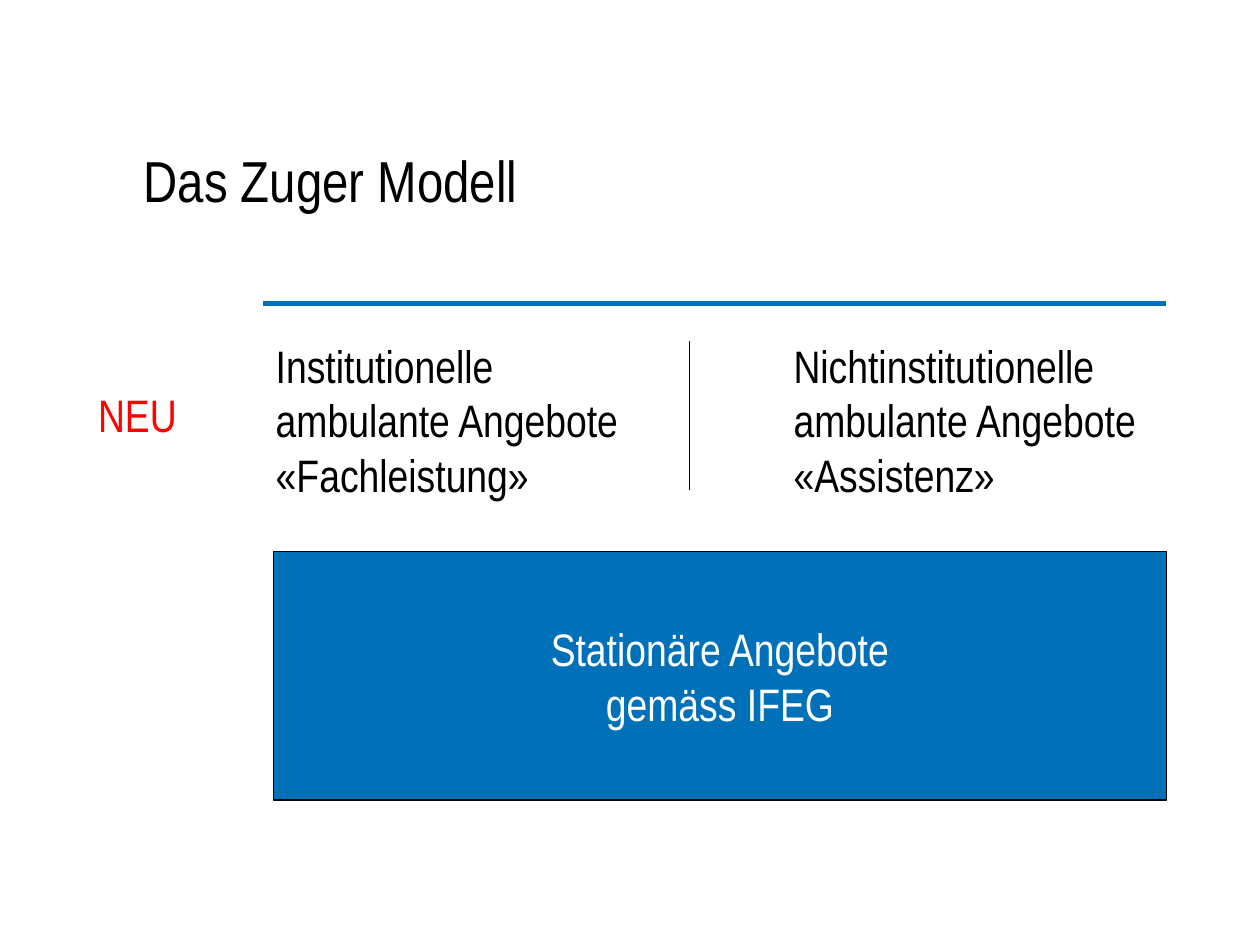
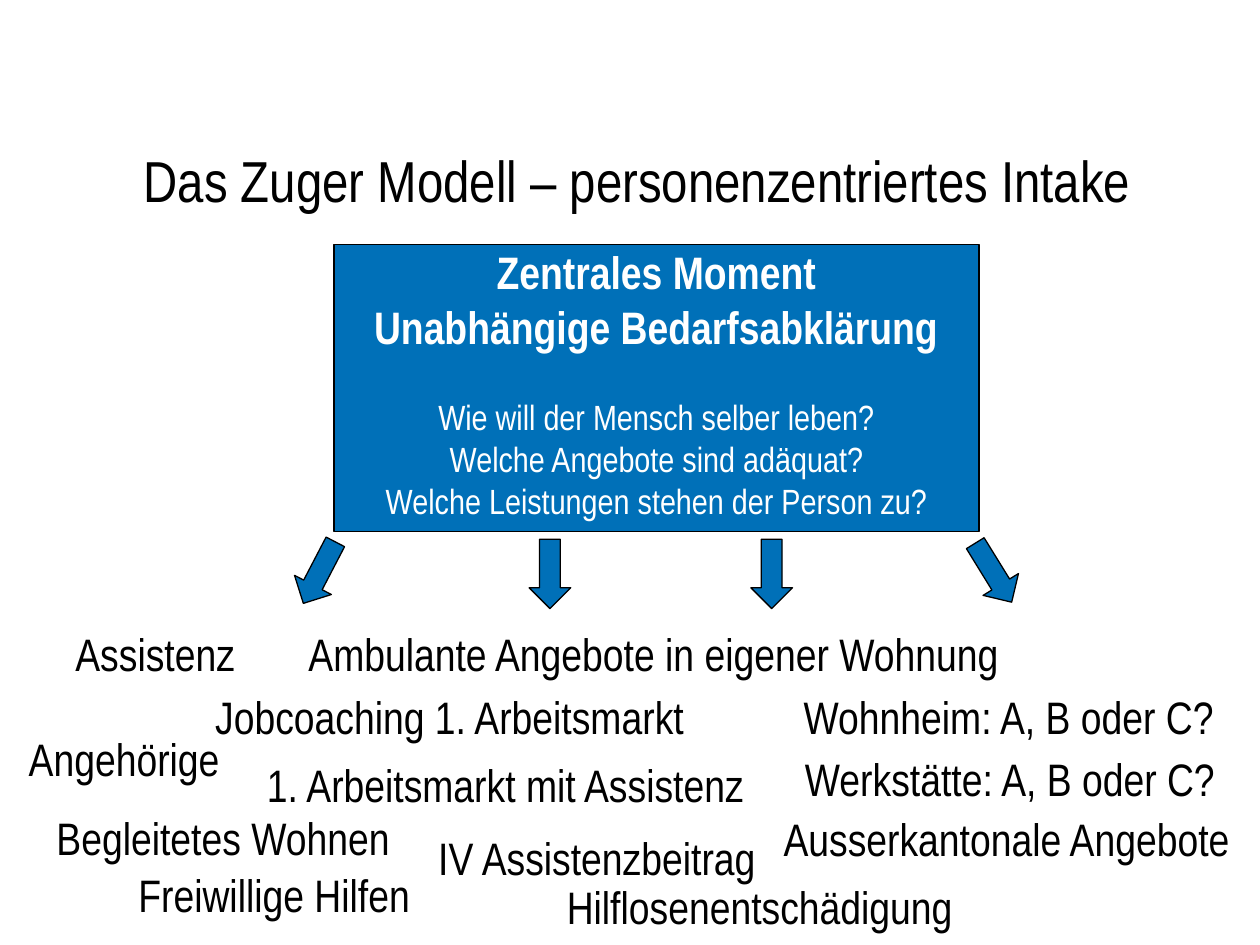
"""Build two slides on the Zug model of care and its person-centred intake."""
from dataclasses import dataclass
from typing import Any

from lxml.etree import SubElement
from pptx import Presentation
from pptx.dml.color import RGBColor
from pptx.enum.shapes import MSO_CONNECTOR as Link, MSO_SHAPE as Preset
from pptx.enum.text import MSO_ANCHOR as Anchor, MSO_AUTO_SIZE as Fit, PP_ALIGN as Align
from pptx.oxml.ns import qn
from pptx.slide import Slide
from pptx.util import Inches, Pt

WIDTH, HEIGHT = Inches(10), Inches(7.5)
COLUMNS, ROWS = 100, 75
COLORS = {"ink": "000000", "blue": "0070B8", "white": "FFFFFF", "new": "FF0000"}
FONT = "Arial Narrow"
TITLE_SIZE, LABEL_SIZE, QUESTION_SIZE = 33, 26, 20
HAIRLINE, RULE_WEIGHT = 0.75, 2.75
LABEL_ROWS = 5.4
NO_INSETS = {"margin_left": 0, "margin_top": 0, "margin_right": 0, "margin_bottom": 0}
TITLE_FORMAT = {**NO_INSETS, "auto_size": Fit.NONE, "word_wrap": True,
                "vertical_anchor": Anchor.TOP}
PANEL_FORMAT = {**NO_INSETS, "word_wrap": False}
COLUMN_FORMAT = {"word_wrap": True, "auto_size": Fit.SHAPE_TO_FIT_TEXT}
LABEL_FORMAT = {"word_wrap": False, "auto_size": Fit.SHAPE_TO_FIT_TEXT}


@dataclass(frozen=True)
class Area:
    """A rectangle in grid columns and rows."""
    left: float
    top: float
    width: float
    height: float

    def box(self) -> tuple[int, int, int, int]:
        """Return left, top, width and height in slide units."""
        return across(self.left), down(self.top), across(self.width), down(self.height)


@dataclass(frozen=True)
class Line:
    """One paragraph with its look."""
    text: str
    size: float = LABEL_SIZE
    color: str = "ink"
    bold: bool = False
    align: Align = Align.LEFT
    gap: float = 0


@dataclass(frozen=True)
class Offer:
    """A kind of support placed on the grid."""
    text: str
    left: float
    top: float
    width: float


@dataclass(frozen=True)
class Arrow:
    """A downward arrow with its turn in degrees."""
    left: float
    top: float
    turn: float = 0


TITLE_AREA = Area(11.4, 11.5, 85.1, 7.1)
AMBULANT = (
    (20.9, ("Institutionelle", "ambulante Angebote", "«Fachleistung»")),
    (62, ("Nichtinstitutionelle", "ambulante Angebote", "«Assistenz»")),
)
ARROWS = (Arrow(23.7, 42.7, 27.5), Arrow(42, 42.8), Arrow(59.6, 42.8),
          Arrow(77.2, 42.7, 328.3))
OFFERS = (
    Offer("Assistenz", 5, 49.2, 14.8),
    Offer("Ambulante Angebote in eigener Wohnung", 23.5, 49.2, 59),
    Offer("Jobcoaching 1. Arbeitsmarkt", 16.1, 54.2, 39.6),
    Offer("Wohnheim: A, B oder C?", 62.8, 54.2, 34.9),
    Offer("Angehörige", 1.3, 57.5, 17.3),
    Offer("1. Arbeitsmarkt mit Assistenz", 20.2, 59.6, 40.2),
    Offer("Werkstätte: A, B oder C?", 62.9, 59.1, 35.7),
    Offer("Begleitetes Wohnen", 3.5, 63.8, 28.7),
    Offer("Ausserkantonale Angebote", 61.2, 63.9, 37.8),
    Offer("IV Assistenzbeitrag", 33.8, 65.4, 27.4),
    Offer("Freiwillige Hilfen", 10, 68.3, 23.8),
    Offer("Hilflosenentschädigung", 44, 69.3, 32.9),
)


def across(columns: float) -> int:
    """Convert grid columns to slide units."""
    return round(WIDTH * columns / COLUMNS)


def down(rows: float) -> int:
    """Convert grid rows to slide units."""
    return round(HEIGHT * rows / ROWS)


def rgb(color: str) -> RGBColor:
    """Look up a named colour."""
    return RGBColor.from_string(COLORS[color])


def apply(target: Any, values: dict[str, Any]) -> None:
    """Set every given attribute on the target."""
    for key, value in values.items():
        setattr(target, key, value)


def write(holder: Any, lines: list[Line], frame_format: dict[str, Any]) -> None:
    """Fill a text frame with formatted paragraphs."""
    frame = holder.text_frame
    apply(frame, frame_format)
    for index, line in enumerate(lines):
        paragraph = frame.add_paragraph() if index else frame.paragraphs[0]
        apply(paragraph, {"text": line.text, "alignment": line.align})
        if line.gap:
            paragraph.space_before = Pt(line.gap)
        apply(paragraph.runs[0].font,
              {"name": FONT, "size": Pt(line.size), "bold": line.bold})
        paragraph.runs[0].font.color.rgb = rgb(line.color)


def add_text(slide: Slide, area: Area, lines: list[Line],
             frame_format: dict[str, Any]) -> None:
    """Place free text on the grid."""
    write(slide.shapes.add_textbox(*area.box()), lines, frame_format)


def add_blue(slide: Slide, preset: Preset, area: Area) -> Any:
    """Draw a blue shape with a thin dark outline."""
    shape = slide.shapes.add_shape(preset, *area.box())
    shape.shadow.inherit = False
    shape.fill.solid()
    shape.fill.fore_color.rgb = rgb("blue")
    shape.line.color.rgb = rgb("ink")
    shape.line.width = Pt(HAIRLINE)
    return shape


def add_panel(slide: Slide, area: Area, lines: list[Line], anchor: Anchor) -> None:
    """Draw a blue panel with its message."""
    write(add_blue(slide, Preset.RECTANGLE, area), lines,
          {**PANEL_FORMAT, "vertical_anchor": anchor})


def add_rule(slide: Slide, area: Area, color: str, weight: float) -> None:
    """Draw a straight line across an area."""
    left, top, width, height = area.box()
    rule = slide.shapes.add_connector(Link.STRAIGHT, left, top, left + width, top + height)
    rule.line.color.rgb = rgb(color)
    rule.line.width = Pt(weight)
    SubElement(rule._element.spPr, qn("a:effectLst"))


def add_titled_slide(deck: Any, title: str) -> Slide:
    """Add a slide with the shared title style."""
    slide = deck.slides.add_slide(deck.slide_layouts[5])
    heading = slide.shapes.title
    apply(heading, dict(zip(("left", "top", "width", "height"), TITLE_AREA.box())))
    write(heading, [Line(title, TITLE_SIZE)], TITLE_FORMAT)
    return slide


def build_model(deck: Any) -> None:
    """Build the overview of inpatient and new ambulant offers."""
    slide = add_titled_slide(deck, "Das Zuger Modell")
    stationary = [Line(text, color="white", align=Align.CENTER)
                  for text in ("Stationäre Angebote", "gemäss IFEG")]
    add_panel(slide, Area(21.7, 43.8, 70.9, 19.7), stationary, Anchor.MIDDLE)
    add_rule(slide, Area(20.9, 24.1, 71.6, 0), "blue", RULE_WEIGHT)
    add_rule(slide, Area(54.7, 27.1, 0, 11.8), "ink", HAIRLINE)
    for left, texts in AMBULANT:
        add_text(slide, Area(left, 26.3, 32.3, 18.5), [Line(text) for text in texts],
                 COLUMN_FORMAT)
    add_text(slide, Area(6.8, 30.2, 8.7, LABEL_ROWS), [Line("NEU", color="new")],
             COLUMN_FORMAT)


def build_intake(deck: Any) -> None:
    """Build the needs assessment and the offers it leads to."""
    slide = add_titled_slide(deck, "Das Zuger Modell – personenzentriertes Intake")
    headline = [Line(text, color="white", bold=True, align=Align.CENTER)
                for text in ("Zentrales Moment", "Unabhängige Bedarfsabklärung")]
    questions = [Line(text, QUESTION_SIZE, "white", align=Align.CENTER, gap=gap)
                 for text, gap in (("Wie will der Mensch selber leben?", 24),
                                   ("Welche Angebote sind adäquat?", 0),
                                   ("Welche Leistungen stehen der Person zu?", 0))]
    add_panel(slide, Area(26.5, 19.4, 51.2, 22.8), headline + questions, Anchor.TOP)
    for arrow in ARROWS:
        pointer = add_blue(slide, Preset.DOWN_ARROW, Area(arrow.left, arrow.top, 3.3, 5.5))
        pointer.rotation = arrow.turn
    for offer in OFFERS:
        add_text(slide, Area(offer.left, offer.top, offer.width, LABEL_ROWS),
                 [Line(offer.text)], LABEL_FORMAT)


def main() -> None:
    """Build and save the deck."""
    deck = Presentation()
    apply(deck, {"slide_width": WIDTH, "slide_height": HEIGHT})
    build_model(deck)
    build_intake(deck)
    deck.save("out.pptx")


if __name__ == "__main__":
    main()
